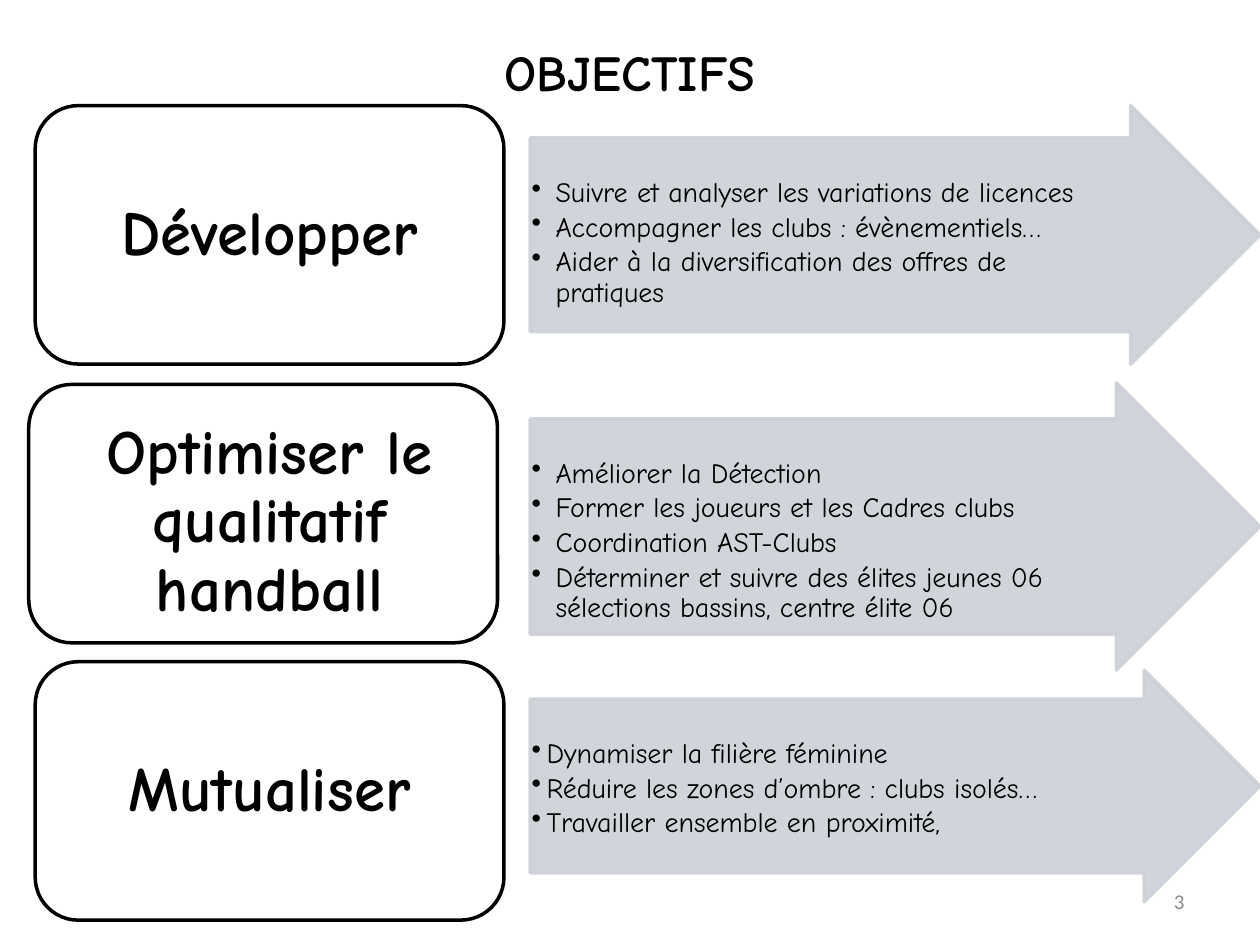
from lxml import etree
from pptx import Presentation, util as u
from pptx.dml.color import RGBColor
from pptx.enum import shapes, text
from pptx.oxml.ns import qn

Cm, Pt = u.Cm, u.Pt
HEX = {"ink": "000000", "paper": "FFFFFF", "arrow": "CDD0D7", "page": "8C8C8C"}
MID, TOP = text.MSO_ANCHOR.MIDDLE, text.MSO_ANCHOR.TOP
ALIGN = text.PP_ALIGN


def rgb(name):
    return RGBColor.from_string(HEX[name])


class Deck:
    font = "Comic Neue"

    def __init__(self):
        self.prs = Presentation()
        self.prs.slide_width, self.prs.slide_height = Cm(25.4), Cm(19.05)
        self.slide = self.prs.slides.add_slide(self.prs.slide_layouts[6])

    def fill_text(self, shape, lines, size, align, color="ink", bold=False,
                  font=None, anchor=MID, pad=(0.25, 0.13, 0.25, 0.13)):
        """Fill a shape with paragraphs; pad is left, top, right, bottom."""
        frame = shape.text_frame
        frame.word_wrap, frame.vertical_anchor = True, anchor
        (frame.margin_left, frame.margin_top,
         frame.margin_right, frame.margin_bottom) = map(Cm, pad)
        frame.text = "\n".join(lines)
        for par in frame.paragraphs:
            par.alignment = align
            par.font.name, par.font.size = font or self.font, Pt(size)
            par.font.bold, par.font.color.rgb = bold, rgb(color)
        return frame.paragraphs

    def label(self, words, x, y, w, h, size, align, **style):
        box = self.slide.shapes.add_textbox(Cm(x), Cm(y), Cm(w), Cm(h))
        self.fill_text(box, [words], size, align, **style)

    def shape(self, kind, x, y, w, h, fill, line):
        item = self.slide.shapes.add_shape(kind, Cm(x), Cm(y), Cm(w), Cm(h))
        item.shadow.inherit = False
        item.fill.solid()
        item.fill.fore_color.rgb = rgb(fill)
        item.line.color.rgb, item.line.width = rgb(line), Pt(2)
        return item

    def goal(self, words, x, y, shift):
        """Rounded box with a large heading, moved by shift (right, down)."""
        box = self.shape(shapes.MSO_SHAPE.ROUNDED_RECTANGLE,
                         x, y, 9.45, 5.21, "paper", "ink")
        dx, dy = shift
        pars = self.fill_text(box, [words], 36, ALIGN.CENTER, bold=True,
                              pad=(0.38 + dx, 0.18 + dy, 0.38 - dx, 0.18 - dy))
        pars[0].line_spacing = 0.9

    def arrow(self, lines, y, h, indent):
        """Wide arrow holding a bulleted list."""
        item = self.shape(shapes.MSO_SHAPE.RIGHT_ARROW,
                          10.69, y, 14.71, h, "arrow", "arrow")
        item.adjustments[0] = 0.75
        for color in item._element.spPr.iter(qn("a:srgbClr")):
            etree.SubElement(color, qn("a:alpha"), val="90000")
        for par in self.fill_text(item, lines, 16, ALIGN.LEFT, anchor=TOP,
                                  pad=(0.03, 0.81, h / 4, 0.03)):
            par.line_spacing, par.space_after = 0.9, Pt(2.6)
            props = par._p.get_or_add_pPr()
            props.set("marL", str(Cm(indent)))
            props.set("indent", str(-Cm(indent)))
            mark = etree.Element(qn("a:buChar"), char="•")
            props.find(qn("a:spcAft")).addnext(mark)


# Heading, box left and top, heading shift, arrow top and height, indent, list
ROWS = [
    ("Développer", 0.71, 2.13, (0, 0), 2.13, 5.21, 0.48, [
        "Suivre et analyser les variations de licences",
        "Accompagner les clubs : évènementiels…",
        "Aider à la diversification des offres de pratiques"]),
    ("Optimiser le qualitatif handball", 0.58, 7.75, (0.13, 0.18),
     7.72, 5.79, 0.48, [
        "Améliorer la Détection",
        "Former les joueurs et les Cadres clubs",
        "Coordination AST-Clubs",
        "Déterminer et suivre des élites jeunes 06 "
        "sélections bassins, centre élite 06"]),
    ("Mutualiser", 0.71, 13.34, (0, 0), 13.51, 4.67, 0.3, [
        "Dynamiser la filière féminine",
        "Réduire les zones d’ombre : clubs isolés…",
        "Travailler ensemble en proximité,"]),
]


def main():
    deck = Deck()
    # Title
    deck.label("OBJECTIFS", 1.27, 0.76, 22.86, 1.37, 28.8, ALIGN.CENTER,
               bold=True)
    # Goals and their actions
    for head, x, y, shift, top, high, indent, lines in ROWS:
        deck.arrow(lines, top, high, indent)
        deck.goal(head, x, y, shift)
    # Page number
    deck.label("3", 18.2, 17.66, 5.93, 1.01, 12, ALIGN.RIGHT,
               color="page", font="Calibri")
    deck.prs.save("out.pptx")


if __name__ == "__main__":
    main()
